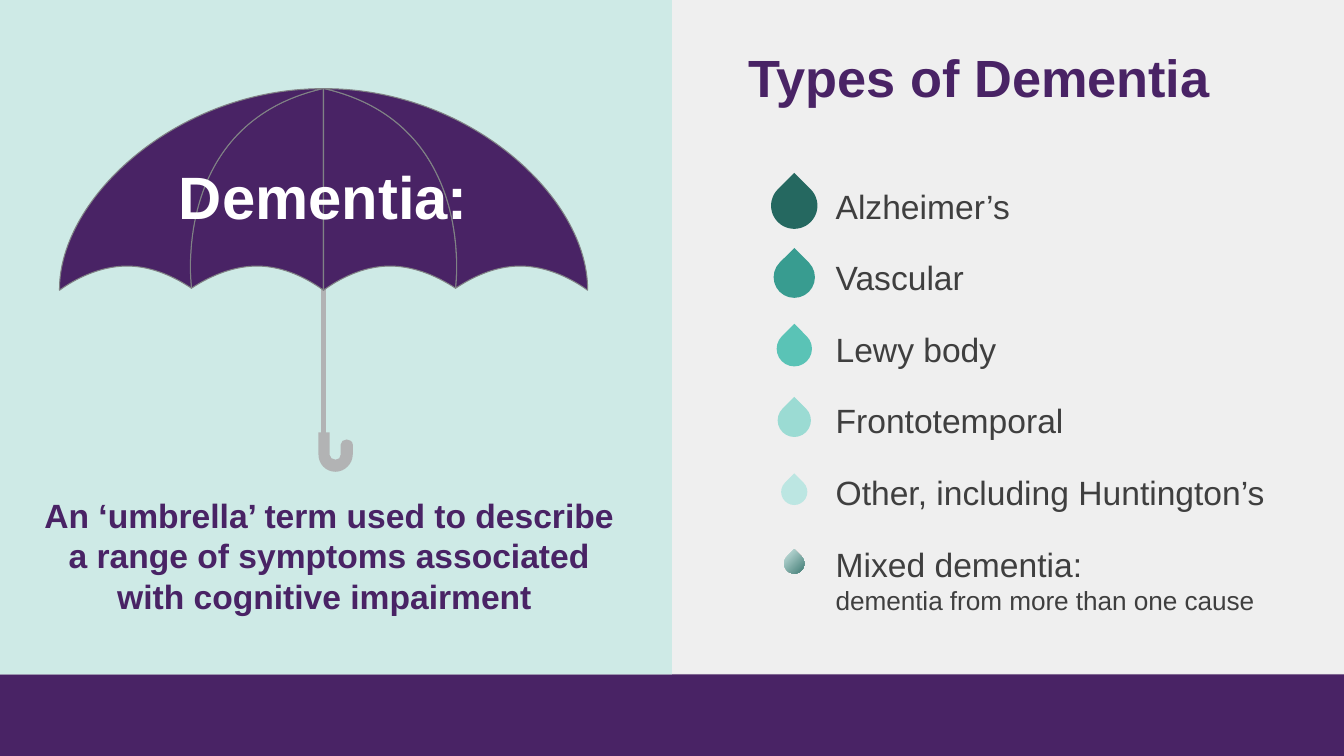
from dataclasses import dataclass

from lxml import etree
from pptx import Presentation
from pptx import util as u
from pptx.dml import color
from pptx.enum import shapes, text
from pptx.oxml import ns

COLORS = {
    "background": "EFEFEF", "mint": "CEEAE6", "purple": "492365",
    "gray": "B2B3B4", "seam": "808285", "text": "3F3F3F", "white": "FFFFFF",
}
SLIDE_WIDTH, SLIDE_HEIGHT = 40 / 3, 7.5
FOOTER_TOP = 6.69
AXIS = 3.21  # vertical centre of the umbrella
ROW_TOP, ROW_PITCH, ROW_HEIGHT = 1.84, 0.71, 0.4
DROP_CENTER = 7.88

Point = tuple[float, float]
Outline = list[list[Point]]  # start, then lines (1 point) or curves (3 points)


@dataclass
class DementiaType:
    name: str
    drop_size: float
    drop_colors: tuple[str, ...]
    width: float = 2.79
    detail: str = ""


@dataclass
class TextStyle:
    size: float
    color: str
    bold: bool = False
    align: text.PP_ALIGN = text.PP_ALIGN.LEFT
    anchor: text.MSO_ANCHOR = text.MSO_ANCHOR.TOP
    margins: tuple[float, float] = (0, 0)


TYPES = [
    DementiaType("Alzheimer’s", 0.46, ("256860",)),
    DementiaType("Vascular", 0.41, ("389C90",)),
    DementiaType("Lewy body", 0.35, ("5AC3B6",)),
    DementiaType("Frontotemporal", 0.33, ("9BDBD3",)),
    DementiaType("Other, including Huntington’s", 0.26, ("BCE6E2",), 4.38),
    DementiaType("Mixed dementia:", 0.2, ("DDF2F0", "256860"), 4.38,
                 "dementia from more than one cause"),
]

HANDLE: Outline = [
    [(3.44, 4.36)],
    [(3.41, 4.36), (3.38, 4.38), (3.38, 4.41)],
    [(3.38, 4.51)],
    [(3.38, 4.54), (3.36, 4.56), (3.33, 4.56)],
    [(3.3, 4.56), (3.27, 4.54), (3.27, 4.51)],
    [(3.27, 4.29)], [(3.16, 4.29)], [(3.16, 4.51)],
    [(3.16, 4.6), (3.23, 4.68), (3.33, 4.68)],
    [(3.42, 4.68), (3.5, 4.6), (3.5, 4.51)],
    [(3.5, 4.41)],
    [(3.5, 4.38), (3.47, 4.36), (3.44, 4.36)],
]
INNER_PANEL: Outline = [
    [(3.2, 0.88)],
    [(1.68, 1.23), (1.9, 2.86), (1.9, 2.86)],
    [(2.05, 2.76), (2.29, 2.64), (2.55, 2.64)],
    [(2.82, 2.64), (3.06, 2.77), (3.21, 2.88)],
    [(3.21, 0.88)],
]
OUTER_PANEL: Outline = [
    [(3.2, 0.88)],
    [(1.76, 0.88), (0.59, 1.96), (0.59, 2.87)],
    [(0.59, 2.88)],
    [(0.74, 2.77), (0.99, 2.64), (1.26, 2.64)],
    [(1.52, 2.64), (1.75, 2.76), (1.9, 2.86)],
    [(1.9, 2.86), (1.68, 1.23), (3.2, 0.88)],
]


def rgb(value: str) -> color.RGBColor:
    return color.RGBColor.from_string(value)


def fill_shape(shape, fill: str, line: str = "") -> None:
    shape.shadow.inherit = False
    shape.fill.solid()
    shape.fill.fore_color.rgb = rgb(fill)
    if line:
        shape.line.color.rgb = rgb(line)
        shape.line.width = u.Pt(0.75)
    else:
        shape.line.fill.background()


def add_preset(slide, preset, left: float, top: float, width: float,
               height: float, fill: str):
    shape = slide.shapes.add_shape(preset, *map(u.Inches, (left, top, width, height)))
    fill_shape(shape, fill)
    return shape


def write(shape, lines: list[tuple[str, float]], style: TextStyle) -> None:
    frame = shape.text_frame
    side, end = map(u.Inches, style.margins)
    frame_format = {
        "word_wrap": True, "auto_size": text.MSO_AUTO_SIZE.NONE,
        "vertical_anchor": style.anchor, "margin_left": side,
        "margin_right": side, "margin_top": end, "margin_bottom": end,
    }
    for name, value in frame_format.items():
        setattr(frame, name, value)
    paragraph = frame.paragraphs[0]
    paragraph.alignment = style.align
    for index, (words, size) in enumerate(lines):
        if index:
            paragraph.add_line_break()
        run = paragraph.add_run()
        run.text = words
        font_format = {"name": "Arial", "size": u.Pt(size), "bold": style.bold}
        for name, value in font_format.items():
            setattr(run.font, name, value)
        run.font.color.rgb = rgb(style.color)


def add_text(slide, left: float, top: float, width: float, height: float,
             words: str, style: TextStyle, detail: str = "") -> None:
    box = slide.shapes.add_textbox(*map(u.Inches, (left, top, width, height)))
    lines = [(words, style.size)] + ([(detail, 18.67)] if detail else [])
    write(box, lines, style)


def add_outline(slide, outline: Outline, fill: str, line: str = "") -> None:
    start, *rest = [(u.Inches(x), u.Inches(y)) for part in outline for x, y in part]
    builder = slide.shapes.build_freeform(*start)
    builder.add_line_segments(rest, close=False)
    shape = builder.convert_to_shape()
    fill_shape(shape, fill, line)
    # Join each three points of a curve into one Bézier segment
    route = next(shape._element.iter(ns.qn("a:path")))
    steps = iter(list(route)[1:])
    for part in outline[1:]:
        segment = [next(steps) for _ in part]
        if len(segment) == 3:
            curve = etree.SubElement(route, ns.qn("a:cubicBezTo"))
            segment[0].addprevious(curve)
            for step in segment:
                curve.append(step[0])
                route.remove(step)
    etree.SubElement(route, ns.qn("a:close"))


def add_footer(slide) -> None:
    footer = add_preset(slide, shapes.MSO_SHAPE.RECTANGLE, 0, FOOTER_TOP, SLIDE_WIDTH,
                        SLIDE_HEIGHT - FOOTER_TOP, COLORS["purple"])
    effects = footer._element.spPr.find(ns.qn("a:effectLst"))
    shadow = etree.SubElement(effects, ns.qn("a:outerShdw"), blurRad=str(u.Pt(3.1)),
                              dist=str(u.Pt(1.8)), dir="5400000", rotWithShape="0")
    shade = etree.SubElement(shadow, ns.qn("a:srgbClr"), val="000000")
    etree.SubElement(shade, ns.qn("a:alpha"), val="35000")


def add_umbrella(slide) -> None:
    # Shaft and handle
    shaft = slide.shapes.add_connector(
        shapes.MSO_CONNECTOR.STRAIGHT, *map(u.Inches, (AXIS, 2.54, AXIS, 4.39)))
    shaft.line.color.rgb = rgb(COLORS["gray"])
    shaft.line.width = u.Pt(3.75)
    etree.SubElement(shaft._element.spPr, ns.qn("a:effectLst"))
    add_outline(slide, HANDLE, COLORS["gray"])
    # Canopy: left panels and their mirror images
    for panel in (INNER_PANEL, OUTER_PANEL):
        mirrored = [[(2 * AXIS - x, y) for x, y in part] for part in panel]
        for side in (panel, mirrored):
            add_outline(slide, side, COLORS["purple"], COLORS["seam"])


def add_type_row(slide, index: int, kind: DementiaType) -> None:
    top = ROW_TOP + index * ROW_PITCH
    size = kind.drop_size
    drop = add_preset(slide, shapes.MSO_SHAPE.TEAR, DROP_CENTER - size / 2,
                      top + (ROW_HEIGHT - size) / 2, size, size, kind.drop_colors[0])
    drop.rotation = 315
    if len(kind.drop_colors) > 1:
        drop.fill.gradient()
        drop.fill.gradient_angle = 270
        for stop, value in zip(drop.fill.gradient_stops, kind.drop_colors):
            stop.color.rgb = rgb(value)
    style = TextStyle(24, COLORS["text"], anchor=text.MSO_ANCHOR.MIDDLE)
    height = 0.72 if kind.detail else ROW_HEIGHT
    add_text(slide, 8.29, top, kind.width, height, kind.name, style, kind.detail)


def main() -> None:
    presentation = Presentation()
    presentation.slide_width = u.Inches(SLIDE_WIDTH)
    presentation.slide_height = u.Inches(SLIDE_HEIGHT)
    slide = presentation.slides.add_slide(presentation.slide_layouts[5])
    slide.background.fill.solid()
    slide.background.fill.fore_color.rgb = rgb(COLORS["background"])
    add_footer(slide)

    # Right side: title and list of types
    title = slide.shapes.title
    bounds = {"left": 7.43, "top": 0.45, "width": 5.31, "height": 1.38}
    for name, value in bounds.items():
        setattr(title, name, u.Inches(value))
    write(title, [("Types of Dementia", 37.33)], TextStyle(37.33, COLORS["purple"], True))
    for index, kind in enumerate(TYPES):
        add_type_row(slide, index, kind)

    # Left side: umbrella and definition
    add_preset(slide, shapes.MSO_SHAPE.RECTANGLE, 0, 0, SLIDE_WIDTH / 2, FOOTER_TOP,
               COLORS["mint"])
    add_umbrella(slide)
    center = text.PP_ALIGN.CENTER
    add_text(slide, 0.4, 4.91, 5.73, 1.21,
             "An ‘umbrella’ term used to describe a range of symptoms "
             "associated with cognitive impairment ",
             TextStyle(24, COLORS["purple"], True, center))
    add_text(slide, 0.59, 1.54, 5.24, 0.82, "Dementia:",
             TextStyle(42.67, COLORS["white"], True, center, margins=(0.1, 0.05)))
    presentation.save("out.pptx")


if __name__ == "__main__":
    main()
